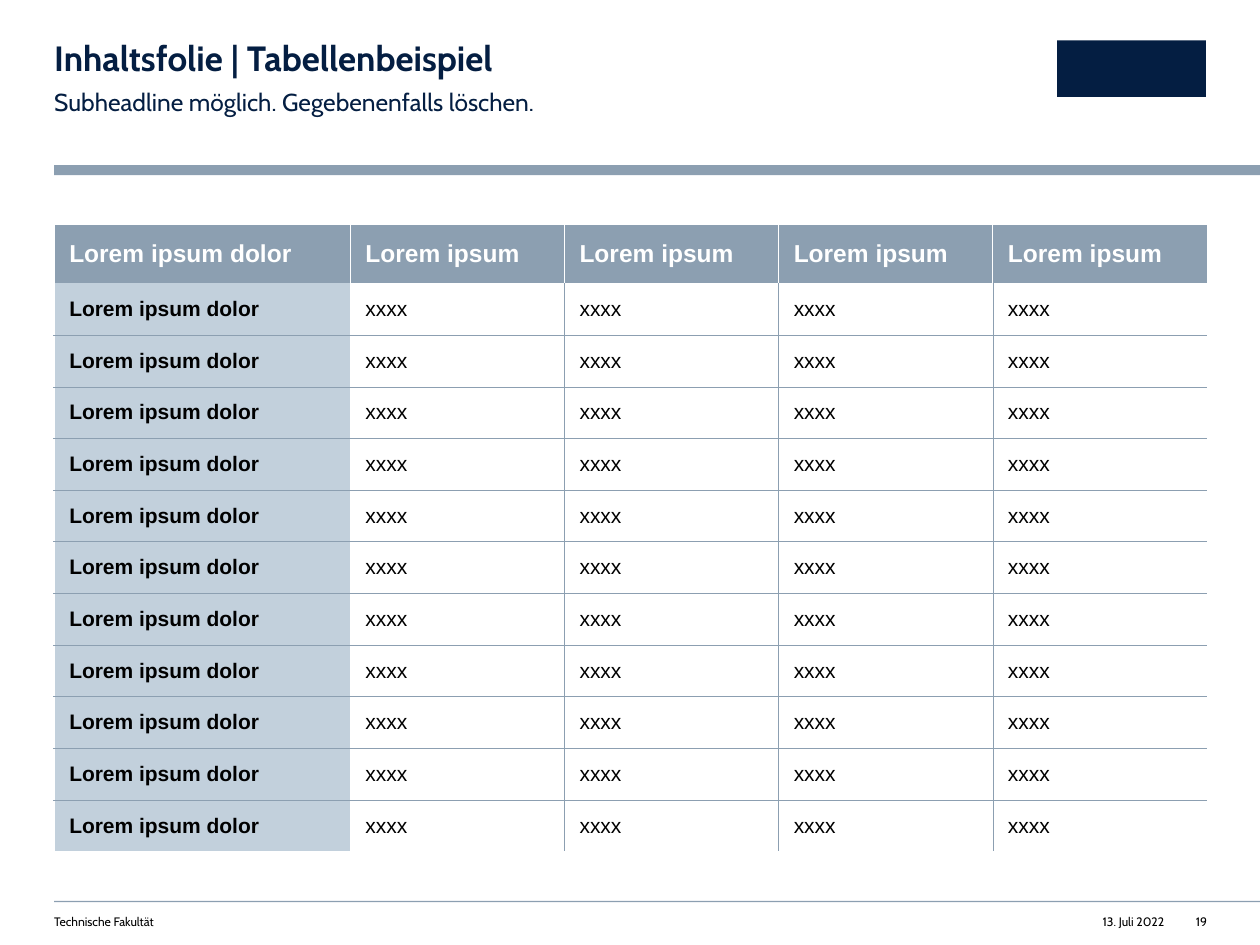
"""Builds a content slide with a headline, an example table and a footer."""
from lxml import etree
from pptx import Presentation
from pptx.dml.color import RGBColor
from pptx.enum.shapes import MSO_SHAPE
from pptx.enum.text import MSO_ANCHOR, MSO_AUTO_SIZE, PP_ALIGN
from pptx.oxml.ns import qn
from pptx.util import Inches, Pt

RECT = MSO_SHAPE.RECTANGLE
TOP, MIDDLE = MSO_ANCHOR.TOP, MSO_ANCHOR.MIDDLE
LEFT, RIGHT = PP_ALIGN.LEFT, PP_ALIGN.RIGHT
NO_FIT = MSO_AUTO_SIZE.NONE

NAVY, STEEL, PALE = "041E42", "8C9FB1", "C2D0DC"
WHITE, BLACK = "FFFFFF", "000000"
MARGIN = 0.43
BODY_ROWS, VALUE_COLS = 11, 4
COL_WIDTHS = [2.35] + [1.7] * VALUE_COLS
ROW_HEIGHTS = [0.47] + [0.41] * BODY_ROWS


def rgb(value):
    return RGBColor.from_string(value)


class SlideBuilder:
    def __init__(self, slide, font="Cabin", cell_font="Arial"):
        self.slide = slide
        self.font = font
        self.cell_font = cell_font

    def bar(self, x, y, w, h, color):
        sp = self.slide.shapes.add_shape(RECT, *map(Inches, (x, y, w, h)))
        sp.shadow.inherit = False
        sp.fill.solid()
        sp.fill.fore_color.rgb = rgb(color)
        sp.line.fill.background()

    def add_run(self, tf, text, size, color, font, bold=False, **para_format):
        p = tf.paragraphs[0]
        for name, value in para_format.items():
            setattr(p, name, value)
        r = p.add_run()
        r.text = text
        for name, value in dict(size=Pt(size), bold=bold, name=font).items():
            setattr(r.font, name, value)
        r.font.color.rgb = rgb(color)

    def frame(self, sp, text, size, color, wrap=True, **style):
        tf = sp.text_frame
        layout = dict(margin_left=0, margin_top=0, margin_right=0, margin_bottom=0,
                      word_wrap=wrap, auto_size=NO_FIT, vertical_anchor=TOP)
        for name, value in layout.items():
            setattr(tf, name, value)
        self.add_run(tf, text, size, color, self.font, **style)

    def title(self, x, y, w, h, text, size, color, **style):
        sp = self.slide.shapes.title
        sp.left, sp.top, sp.width, sp.height = map(Inches, (x, y, w, h))
        self.frame(sp, text, size, color, **style)

    def text(self, x, y, w, h, text, size, color, **style):
        sp = self.slide.shapes.add_textbox(*map(Inches, (x, y, w, h)))
        self.frame(sp, text, size, color, **style)

    def borders(self, cell, sides):
        tc_pr = cell._tc.get_or_add_tcPr()
        for side in "LRTB":
            color, width = sides.get(side, (None, 0))
            ln = etree.SubElement(tc_pr, qn(f"a:ln{side}"), w=str(Pt(width)))
            if color is None:
                etree.SubElement(ln, qn("a:noFill"))
            else:
                fill = etree.SubElement(ln, qn("a:solidFill"))
                etree.SubElement(fill, qn("a:srgbClr"), val=color)

    def cell(self, cell, text, size, color, bold, fill, sides):
        layout = dict(margin_left=Inches(0.12), margin_right=Inches(0.12),
                      margin_top=Inches(0.04), margin_bottom=Inches(0.04),
                      vertical_anchor=MIDDLE)
        for name, value in layout.items():
            setattr(cell, name, value)
        self.borders(cell, sides)
        if fill:
            cell.fill.solid()
            cell.fill.fore_color.rgb = rgb(fill)
        else:
            cell.fill.background()
        self.add_run(cell.text_frame, text, size, color, self.cell_font, bold=bold)

    def table(self, x, y, widths, heights):
        size = map(Inches, (x, y, sum(widths), sum(heights)))
        table = self.slide.shapes.add_table(len(heights), len(widths), *size).table
        table.first_row = table.horz_banding = False
        for column, width in zip(table.columns, widths):
            column.width = Inches(width)
        for row, height in zip(table.rows, heights):
            row.height = Inches(height)
        return table


def cell_borders(row, col):
    thin, edge = (STEEL, 0.25), (WHITE, 1)
    if row == 0:
        sides = {"T": edge, "L": (WHITE, 0.5) if col else edge}
        if col < VALUE_COLS:
            sides["R"] = (WHITE, 0.5)
        return sides
    sides = {"L": edge if col < 2 else thin}
    if col < VALUE_COLS:
        sides["R"] = thin if col else edge
    if row > 1:
        sides["T"] = thin
    if row < BODY_ROWS:
        sides["B"] = thin
    return sides


def fill_table(s, table):
    for row in range(BODY_ROWS + 1):
        for col in range(VALUE_COLS + 1):
            if row == 0:
                text = "Lorem ipsum" if col else "Lorem ipsum dolor"
                style = (14, WHITE, True, STEEL)
            elif col == 0:
                text, style = "Lorem ipsum dolor", (12, BLACK, True, PALE)
            else:
                text, style = "xxxx", (12, BLACK, False, None)
            s.cell(table.cell(row, col), text, *style, cell_borders(row, col))


def main():
    prs = Presentation()
    prs.slide_width, prs.slide_height = Inches(10), Inches(7.5)
    s = SlideBuilder(prs.slides.add_slide(prs.slide_layouts[5]))

    s.bar(MARGIN, 1.31, 10 - MARGIN, 0.08, STEEL)
    s.bar(MARGIN, 7.15, 10 - MARGIN, 0.01, STEEL)
    s.bar(8.39, 0.32, 1.18, 0.45, NAVY)

    s.text(8.65, 7.26, 0.59, 0.12, "13. Juli 2022", 7, BLACK, wrap=False, alignment=RIGHT)
    s.text(MARGIN, 7.26, 4.49, 0.12, "Technische Fakultät", 7, BLACK)
    s.text(9.38, 7.26, 0.2, 0.12, "19", 7, BLACK, wrap=False, alignment=RIGHT)

    s.title(MARGIN, 0.33, 5.61, 0.3, "Inhaltsfolie | Tabellenbeispiel", 20, NAVY,
            bold=True, alignment=LEFT, line_spacing=0.9)
    s.text(MARGIN, 0.67, 5.61, 0.24, "Subheadline möglich. Gegebenenfalls löschen.", 14, NAVY,
           line_spacing=1.1, space_after=Pt(8))

    fill_table(s, s.table(MARGIN, 1.78, COL_WIDTHS, ROW_HEIGHTS))
    prs.save("out.pptx")


if __name__ == "__main__":
    main()
